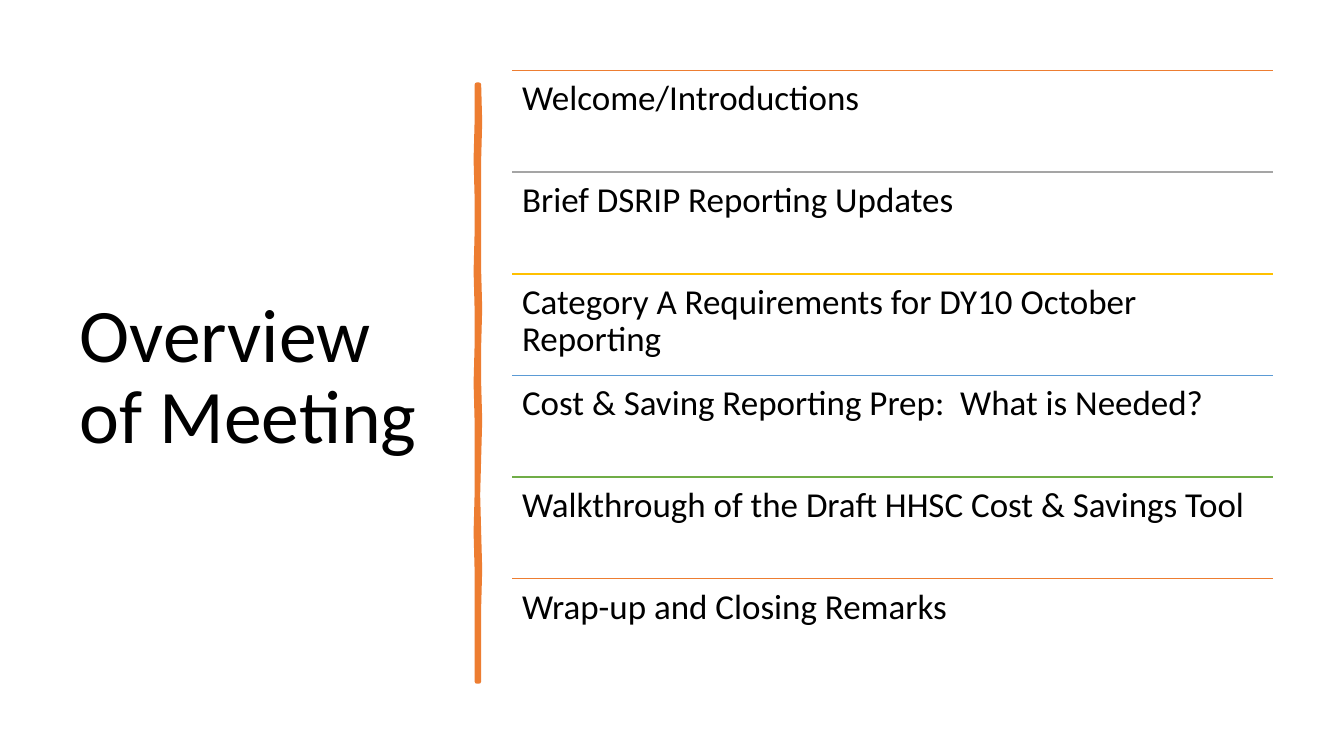
import pptx
import pptx.dml.color
import pptx.enum.shapes
import pptx.enum.text
import pptx.oxml.ns
import pptx.util
from lxml import etree

Inches, Pt = pptx.util.Inches, pptx.util.Pt

TITLE = "Overview of Meeting"
FONT, BLACK, ORANGE = "Calibri", "000000", "ED7D31"
AGENDA = [
    ("Welcome/Introductions", ORANGE),
    ("Brief DSRIP Reporting Updates", "A5A5A5"),
    ("Category A Requirements for DY10 October Reporting", "FFC000"),
    ("Cost & Saving Reporting Prep:  What is Needed?", "5B9BD5"),
    ("Walkthrough of the Draft HHSC Cost & Savings Tool", "70AD47"),
    ("Wrap-up and Closing Remarks", ORANGE),
]
AGENDA_LEFT, AGENDA_TOP, AGENDA_WIDTH, AGENDA_HEIGHT = 5.08, 0.7, 7.55, 6.05

# Hand-drawn divider: x of the left and right edge at evenly spaced heights
DIVIDER_TOP, DIVIDER_BOTTOM = 0.84, 6.76
DIVIDER_EDGES = [
    (4.73, 4.75), (4.73, 4.76), (4.72, 4.75), (4.73, 4.75), (4.73, 4.75),
    (4.72, 4.75), (4.73, 4.76), (4.73, 4.75), (4.72, 4.75), (4.73, 4.76),
    (4.73, 4.75), (4.73, 4.74), (4.72, 4.75), (4.73, 4.76), (4.73, 4.75),
    (4.73, 4.75), (4.73, 4.75),
]


def color(hex_value):
    return pptx.dml.color.RGBColor.from_string(hex_value)


def write(frame, text, size, anchor):
    frame.text = text
    frame.word_wrap = True
    frame.auto_size = pptx.enum.text.MSO_AUTO_SIZE.NONE
    frame.vertical_anchor = anchor
    paragraph = frame.paragraphs[0]
    paragraph.line_spacing = 0.9
    font = paragraph.runs[0].font
    font.name, font.size = FONT, Pt(size)
    font.color.rgb = color(BLACK)


def place_title(slide):
    title = slide.shapes.title
    title.left, title.top = Inches(0.69), Inches(0.7)
    title.width, title.height = Inches(3.74), Inches(6.11)
    write(title.text_frame, TITLE, 54, pptx.enum.text.MSO_ANCHOR.MIDDLE)


def draw_divider(slide):
    step = (DIVIDER_BOTTOM - DIVIDER_TOP) / (len(DIVIDER_EDGES) - 1)
    heights = [DIVIDER_TOP + i * step for i in range(len(DIVIDER_EDGES))]
    left = [(Inches(l), Inches(y)) for (l, _), y in zip(DIVIDER_EDGES, heights)]
    right = [(Inches(r), Inches(y)) for (_, r), y in zip(DIVIDER_EDGES, heights)]
    builder = slide.shapes.build_freeform(*left[0])
    builder.add_line_segments(left[1:] + right[::-1], close=True)
    divider = builder.convert_to_shape()
    divider.shadow.inherit = False
    divider.fill.solid()
    divider.fill.fore_color.rgb = color(ORANGE)
    divider.line.color.rgb = color(ORANGE)
    divider.line.width = Pt(3.25)
    etree.SubElement(divider.line._get_or_add_ln(), pptx.oxml.ns.qn("a:round"))


def add_agenda_item(slide, text, rule_color, top, height):
    rule = slide.shapes.add_connector(
        pptx.enum.shapes.MSO_CONNECTOR.STRAIGHT,
        Inches(AGENDA_LEFT), Inches(top),
        Inches(AGENDA_LEFT + AGENDA_WIDTH), Inches(top))
    rule.line.color.rgb = color(rule_color)
    rule.line.width = Pt(1)
    etree.SubElement(rule._element.spPr, pptx.oxml.ns.qn("a:effectLst"))

    item = slide.shapes.add_textbox(
        Inches(AGENDA_LEFT), Inches(top), Inches(AGENDA_WIDTH), Inches(height))
    frame = item.text_frame
    frame.margin_left = frame.margin_right = Inches(0.1)
    frame.margin_top = frame.margin_bottom = Inches(0.1)
    write(frame, text, 25, pptx.enum.text.MSO_ANCHOR.TOP)


def main():
    deck = pptx.Presentation()
    deck.slide_width, deck.slide_height = Inches(13.33), Inches(7.5)
    slide = deck.slides.add_slide(deck.slide_layouts[5])
    place_title(slide)
    slide.shapes.title.text_frame.paragraphs[0].alignment = pptx.enum.text.PP_ALIGN.LEFT
    draw_divider(slide)
    row_height = AGENDA_HEIGHT / len(AGENDA)
    for row, (text, rule_color) in enumerate(AGENDA):
        add_agenda_item(slide, text, rule_color, AGENDA_TOP + row * row_height, row_height)
    deck.save("out.pptx")


if __name__ == "__main__":
    main()
